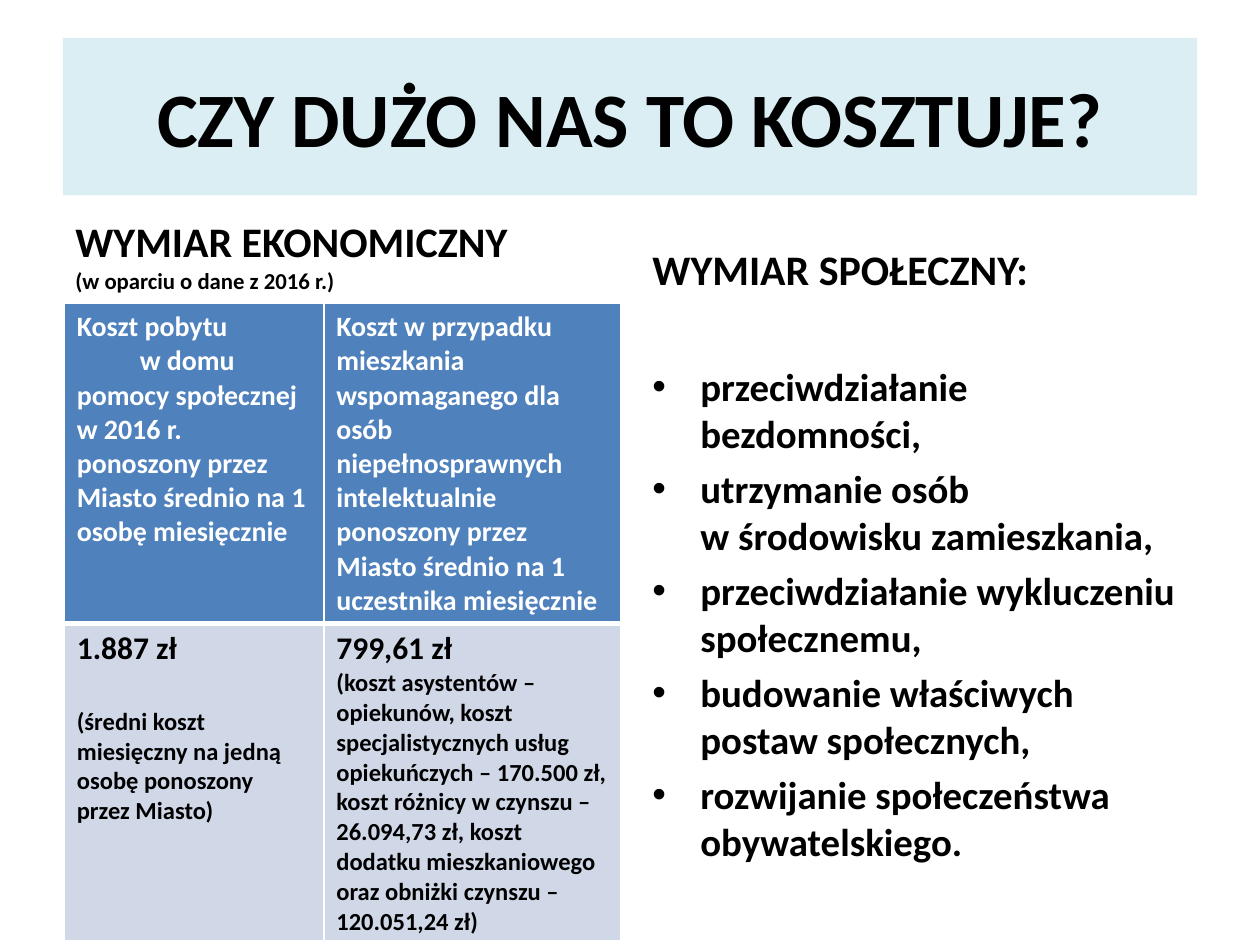
from dataclasses import dataclass

from lxml.etree import SubElement
from pptx import Presentation
from pptx.dml.color import RGBColor
from pptx.enum.shapes import MSO_SHAPE
from pptx.enum.text import MSO_ANCHOR as Anchor, PP_ALIGN as Align
from pptx.oxml.ns import qn
from pptx.util import Inches, Pt


@dataclass(frozen=True)
class Theme:
    font: str = "Calibri"
    black: str = "000000"
    white: str = "FFFFFF"
    banner: str = "DBEEF4"
    header: str = "4F81BD"
    body: str = "D0D8E8"
    title_size: float = 44
    heading_size: float = 24
    list_size: float = 22.2
    amount_size: float = 18
    header_size: float = 16
    detail_size: float = 14
    note_size: float = 13


theme = Theme()


def write(para, text, size, color=theme.black):
    """Append bold text to a paragraph; newlines become line breaks."""
    for index, line in enumerate(text.split("\n")):
        if index:
            para.add_line_break()
        span = para.add_run()
        span.text = line
        span.font.name = theme.font
        span.font.size = Pt(size)
        span.font.bold = True
        span.font.color.rgb = RGBColor.from_string(color)


def set_indent(para, left, first, bullet=None):
    properties = para._p.get_or_add_pPr()
    properties.set("marL", str(Inches(left)))
    properties.set("indent", str(Inches(first)))
    if bullet:
        SubElement(properties, qn("a:buFont"), typeface="Arial")
        SubElement(properties, qn("a:buChar"), char=bullet)


deck = Presentation()
deck.slide_width, deck.slide_height = Inches(10), Inches(7.5)
page = deck.slides.add_slide(deck.slide_layouts[6])

# Title banner
banner = page.shapes.add_shape(
    MSO_SHAPE.RECTANGLE, Inches(0.5), Inches(0.3), Inches(9), Inches(1.25))
banner.shadow.inherit = False
banner.fill.solid()
banner.fill.fore_color.rgb = RGBColor.from_string(theme.banner)
banner.line.fill.background()
banner.text_frame.word_wrap = True
banner.text_frame.vertical_anchor = Anchor.MIDDLE
para = banner.text_frame.paragraphs[0]
para.alignment = Align.CENTER
write(para, "CZY DUŻO NAS TO KOSZTUJE?", theme.title_size)

# Column headings
headings = [
    (0.5, [("WYMIAR EKONOMICZNY\n", theme.heading_size),
           ("(w oparciu o dane z 2016 r.)", theme.note_size)]),
    (5.08, [("WYMIAR SPOŁECZNY:", theme.heading_size)]),
]
for left, parts in headings:
    box = page.shapes.add_textbox(Inches(left), Inches(1.68), Inches(4.42), Inches(0.7))
    box.text_frame.word_wrap = True
    box.text_frame.vertical_anchor = Anchor.BOTTOM
    for text, size in parts:
        write(box.text_frame.paragraphs[0], text, size)

# Cost table: each paragraph is (text, size, space before, first-line indent)
header_cells = [
    [("Koszt pobytu", theme.header_size, 0, 0),
     ("w domu\npomocy społecznej w 2016 r. ponoszony przez Miasto średnio na 1 "
      "osobę miesięcznie", theme.header_size, 0, 0.5)],
    [("Koszt w przypadku mieszkania wspomaganego dla osób niepełnosprawnych "
      "intelektualnie ponoszony przez Miasto średnio na 1 uczestnika miesięcznie",
      theme.header_size, 0, 0)],
]
cost_cells = [
    [("1.887 zł", theme.amount_size, 0, 0),
     ("(średni koszt miesięczny na jedną osobę ponoszony\nprzez Miasto)",
      theme.detail_size, 22, 0)],
    [("799,61 zł", theme.amount_size, 0, 0),
     ("(koszt asystentów – opiekunów, koszt specjalistycznych usług opiekuńczych – "
      "170.500 zł, koszt różnicy w czynszu – 26.094,73 zł, koszt dodatku "
      "mieszkaniowego oraz obniżki czynszu – 120.051,24 zł)", theme.detail_size, 0, 0)],
]
table = page.shapes.add_table(
    2, 2, Inches(0.51), Inches(2.41), Inches(4.42), Inches(5.06)).table
for column, width in zip(table.columns, (2.06, 2.36)):
    column.width = Inches(width)
for row, height in zip(table.rows, (2.54, 2.52)):
    row.height = Inches(height)

row_styles = [(header_cells, theme.header, theme.white, {"T": 1, "B": 3}),
              (cost_cells, theme.body, theme.black, {"T": 3, "B": 1})]
for row, (cells, fill, color, edges) in zip(table.rows, row_styles):
    for cell, paragraphs in zip(row.cells, cells):
        for side, width in ({"L": 1, "R": 1} | edges).items():
            border = SubElement(cell._tc.get_or_add_tcPr(), qn(f"a:ln{side}"), w=str(Pt(width)))
            solid = SubElement(border, qn("a:solidFill"))
            SubElement(solid, qn("a:srgbClr"), val=theme.white)
        cell.fill.solid()
        cell.fill.fore_color.rgb = RGBColor.from_string(fill)
        for index, (text, size, space, first) in enumerate(paragraphs):
            frame = cell.text_frame
            para = frame.add_paragraph() if index else frame.paragraphs[0]
            set_indent(para, 0, first)
            para.space_before = Pt(space)
            write(para, text, size, color)

# Social benefits
benefits = [
    "przeciwdziałanie bezdomności,",
    "utrzymanie osób\nw środowisku zamieszkania,",
    "przeciwdziałanie wykluczeniu społecznemu,",
    "budowanie właściwych postaw społecznych,",
    "rozwijanie społeczeństwa obywatelskiego.",
]
box = page.shapes.add_textbox(Inches(5.08), Inches(2.38), Inches(4.42), Inches(4.32))
frame = box.text_frame
frame.word_wrap = True
frame.margin_top = Inches(0.5)
for index, benefit in enumerate(benefits):
    para = frame.add_paragraph() if index else frame.paragraphs[0]
    set_indent(para, 0.38, -0.38, bullet="•")
    if index:
        para.space_before = Pt(5)
    write(para, benefit, theme.list_size)

deck.save("out.pptx")
